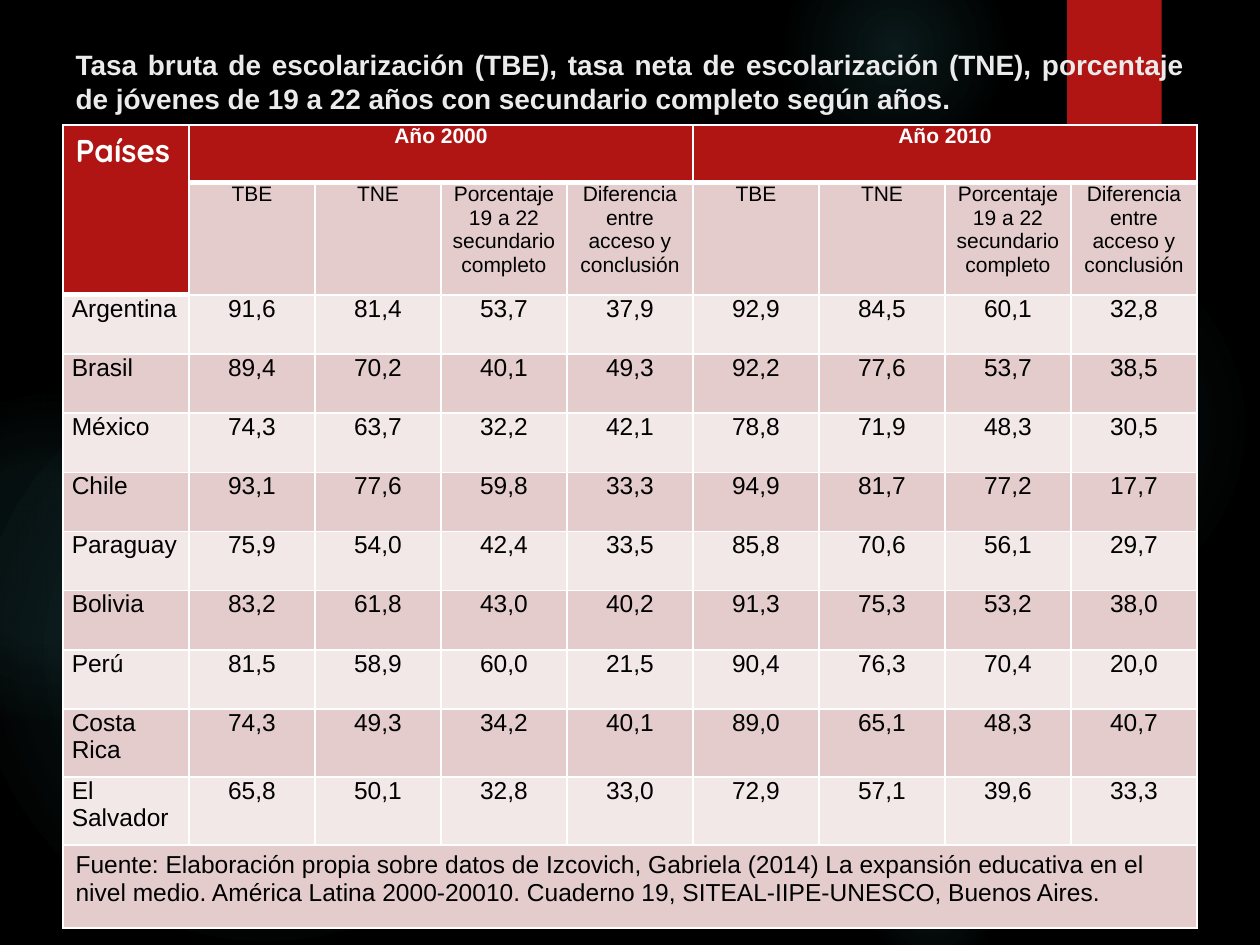
"""Build a slide with a table of schooling rates by country, 2000 and 2010."""
import dataclasses

import lxml.etree
import pptx
import pptx.dml.color
import pptx.enum.shapes
import pptx.enum.text
import pptx.oxml
import pptx.oxml.ns
import pptx.util

Inches = pptx.util.Inches
Pt = pptx.util.Pt
Align = pptx.enum.text.PP_ALIGN
Shape = pptx.enum.shapes.MSO_SHAPE
NS = 'xmlns:a="http://schemas.openxmlformats.org/drawingml/2006/main"'
WIDE, HIGH = 10, 7.5
COLORS = {"back": "000000", "glow": "50B9C1", "red": "B01513", "title": "EBEBEB",
          "white": "FFFFFF", "ink": "000000", "dark": "E4CCCC", "light": "F2E8E7"}
TITLE = ("Tasa bruta de escolarización (TBE), tasa neta de escolarización (TNE), "
         "porcentaje de jóvenes de 19 a 22 años con secundario completo según años.")
SOURCE = ("Fuente: Elaboración propia sobre datos de Izcovich, Gabriela (2014) "
          "La expansión educativa en el nivel medio. América Latina 2000-20010. "
          "Cuaderno 19, SITEAL-IIPE-UNESCO, Buenos Aires.")
YEARS = ["Año 2000", "Año 2010"]
HEADS = ["TBE", "TNE", "Porcentaje 19 a 22 secundario completo",
         "Diferencia entre acceso y conclusión"]
DATA = [
    ("Argentina", "91,6 81,4 53,7 37,9 92,9 84,5 60,1 32,8"),
    ("Brasil", "89,4 70,2 40,1 49,3 92,2 77,6 53,7 38,5"),
    ("México", "74,3 63,7 32,2 42,1 78,8 71,9 48,3 30,5"),
    ("Chile", "93,1 77,6 59,8 33,3 94,9 81,7 77,2 17,7"),
    ("Paraguay", "75,9 54,0 42,4 33,5 85,8 70,6 56,1 29,7"),
    ("Bolivia", "83,2 61,8 43,0 40,2 91,3 75,3 53,2 38,0"),
    ("Perú", "81,5 58,9 60,0 21,5 90,4 76,3 70,4 20,0"),
    ("Costa Rica", "74,3 49,3 34,2 40,1 89,0 65,1 48,3 40,7"),
    ("El Salvador", "65,8 50,1 32,8 33,0 72,9 57,1 39,6 33,3"),
]
ROWS = [0.46, 0.89] + [0.47] * 7 + [0.54] * 2 + [0.66]
COLS = 1 + len(YEARS) * len(HEADS)


@dataclasses.dataclass
class Glow:
    """A soft disc: centre as shares of the slide, size in inches, stops."""
    x: float
    y: float
    size: float
    stops: tuple


@dataclasses.dataclass
class Style:
    """The look of a table cell."""
    fill: str
    size: int = 14
    color: str = "ink"
    bold: bool = False
    align: Align = Align.CENTER
    font: str = "Arial"
    inset: tuple = (0.07, 0)
    after: int = 10
    base: int = 1


GLOWS = [
    Glow(0.84, 0.45, 3.08, ((0, 7), (36, 6), (69, 0))),
    Glow(0.71, 0.05, 1.75, ((0, 14), (36, 7), (73, 0))),
    Glow(0.74, 0.96, 1.08, ((0, 9), (36, 5), (66, 0))),
    Glow(0.21, 0.69, 4.58, ((0, 11), (36, 10), (75, 0))),
    Glow(0.04, 0.59, 2.58, ((0, 8), (36, 8), (72, 0))),
]


def tint(name: str) -> pptx.dml.color.RGBColor:
    """Return the named colour."""
    return pptx.dml.color.RGBColor.from_string(COLORS[name])


def paint(fill, name: str) -> None:
    """Give a fill one solid colour."""
    fill.solid()
    fill.fore_color.rgb = tint(name)


def add_glow(slide, glow: Glow) -> None:
    """Draw a disc that fades out from its centre."""
    size = glow.size
    disc = slide.shapes.add_shape(
        Shape.OVAL, Inches(glow.x * WIDE - size / 2),
        Inches(glow.y * HIGH - size / 2), Inches(size), Inches(size))
    disc.shadow.inherit = False
    disc.line.fill.background()
    stops = "".join(
        f'<a:gs pos="{pos * 1000}"><a:srgbClr val="{COLORS["glow"]}">'
        f'<a:alpha val="{alpha * 1000}"/></a:srgbClr></a:gs>' for pos, alpha in glow.stops)
    grad = pptx.oxml.parse_xml(
        f'<a:gradFill {NS} rotWithShape="1"><a:gsLst>{stops}</a:gsLst><a:path path="circle">'
        '<a:fillToRect l="50000" t="50000" r="50000" b="50000"/></a:path></a:gradFill>')
    disc.element.spPr.find(pptx.oxml.ns.qn("a:prstGeom")).addnext(grad)


def add_flag(slide) -> None:
    """Draw the red ribbon at the top with its soft shadow."""
    flag = slide.shapes.add_shape(
        Shape.RECTANGLE, Inches(8.47), 0, Inches(0.75), Inches(0.16 * HIGH))
    flag.shadow.inherit = False
    flag.line.fill.background()
    paint(flag.fill, "red")
    shade = pptx.oxml.parse_xml(
        f'<a:outerShdw {NS} blurRad="{Pt(3)}" dist="{Pt(2)}" dir="5400000" rotWithShape="0">'
        '<a:srgbClr val="000000"><a:alpha val="45000"/></a:srgbClr></a:outerShdw>')
    flag.element.spPr.find(pptx.oxml.ns.qn("a:effectLst")).append(shade)


def add_title(slide) -> None:
    """Place the title in front of the backdrop."""
    title = slide.shapes.title
    title.left, title.top = Inches(0.05 * WIDE), Inches(0.04 * HIGH)
    title.width, title.height = Inches(0.9 * WIDE), Inches(0.69)
    frame = title.text_frame
    frame.text = TITLE
    frame.word_wrap = True
    frame.vertical_anchor = pptx.enum.text.MSO_ANCHOR.MIDDLE
    para = frame.paragraphs[0]
    para.alignment = Align.JUSTIFY
    set_font(para.runs[0].font, Style("red", 16, "title", True))
    slide.shapes.element.append(title.element)


def set_font(font, style: Style) -> None:
    """Apply the type of a style."""
    font.name, font.size, font.bold = style.font, Pt(style.size), style.bold
    font.color.rgb = tint(style.color)


def set_cell(cell, text: str, style: Style) -> None:
    """Fill, border and write one cell."""
    side, edge = style.inset
    cell.margin_left = cell.margin_right = Inches(side)
    cell.margin_top = cell.margin_bottom = Inches(edge)
    paint(cell.fill, style.fill)
    props = cell._tc.get_or_add_tcPr()
    for spot, name in enumerate("LRTB"):
        width = Pt(style.base if name == "B" else 1)
        props.insert(spot, pptx.oxml.parse_xml(
            f'<a:ln{name} {NS} w="{width}"><a:solidFill><a:srgbClr val="{COLORS["white"]}"/>'
            f'</a:solidFill></a:ln{name}>'))
    if text:
        cell.text_frame.text = text
        para = cell.text_frame.paragraphs[0]
        para.alignment = style.align
        para.space_after = Pt(style.after)
        set_font(para.runs[0].font, style)


def add_grid(slide) -> None:
    """Build the table of countries and rates."""
    grid = slide.shapes.add_table(
        len(ROWS), COLS, Inches(0.05 * WIDE), Inches(0.99),
        Inches(0.9 * WIDE), Inches(sum(ROWS))).table
    grid.horz_banding = False
    for row, tall in zip(grid.rows, ROWS):
        row.height = Inches(tall)
    for col in grid.columns:
        col.width = Inches(0.9 * WIDE / COLS)
    corner = Style("red", 18, "white", True, Align.LEFT, "Quicksand", (0.1, 0.05), 0, 3)
    year = Style("red", 12, "white", True, base=3)
    foot = Style("dark", align=Align.LEFT, inset=(0.1, 0.05), after=0)
    span, last = len(HEADS), len(ROWS) - 1
    tops = [text for name in YEARS for text in [name] + [""] * (span - 1)]
    lines = [(["Países"] + tops, corner, year),
             ([""] + HEADS * len(YEARS), corner, Style("dark", 12))]
    for spot, (name, rates) in enumerate(DATA):
        fill = ("light", "dark")[spot % 2]
        lead = Style(fill, align=Align.JUSTIFY, after=0 if spot else 10)
        lines.append(([name] + rates.split(), lead, Style(fill)))
    lines.append(([SOURCE] + [""] * (COLS - 1), foot, foot))
    for row, (texts, lead, rest) in enumerate(lines):
        for col, text in enumerate(texts):
            set_cell(grid.cell(row, col), text, rest if col else lead)
    grid.cell(0, 0).merge(grid.cell(1, 0))
    for col in range(1, COLS, span):
        grid.cell(0, col).merge(grid.cell(0, col + span - 1))
    grid.cell(last, 0).merge(grid.cell(last, COLS - 1))


def main() -> None:
    """Compose and save the slide."""
    deck = pptx.Presentation()
    deck.slide_width, deck.slide_height = Inches(WIDE), Inches(HIGH)
    slide = deck.slides.add_slide(deck.slide_layouts[5])
    paint(slide.background.fill, "back")
    for glow in GLOWS:
        add_glow(slide, glow)
    add_flag(slide)
    add_title(slide)
    add_grid(slide)
    deck.save("out.pptx")


if __name__ == "__main__":
    main()
